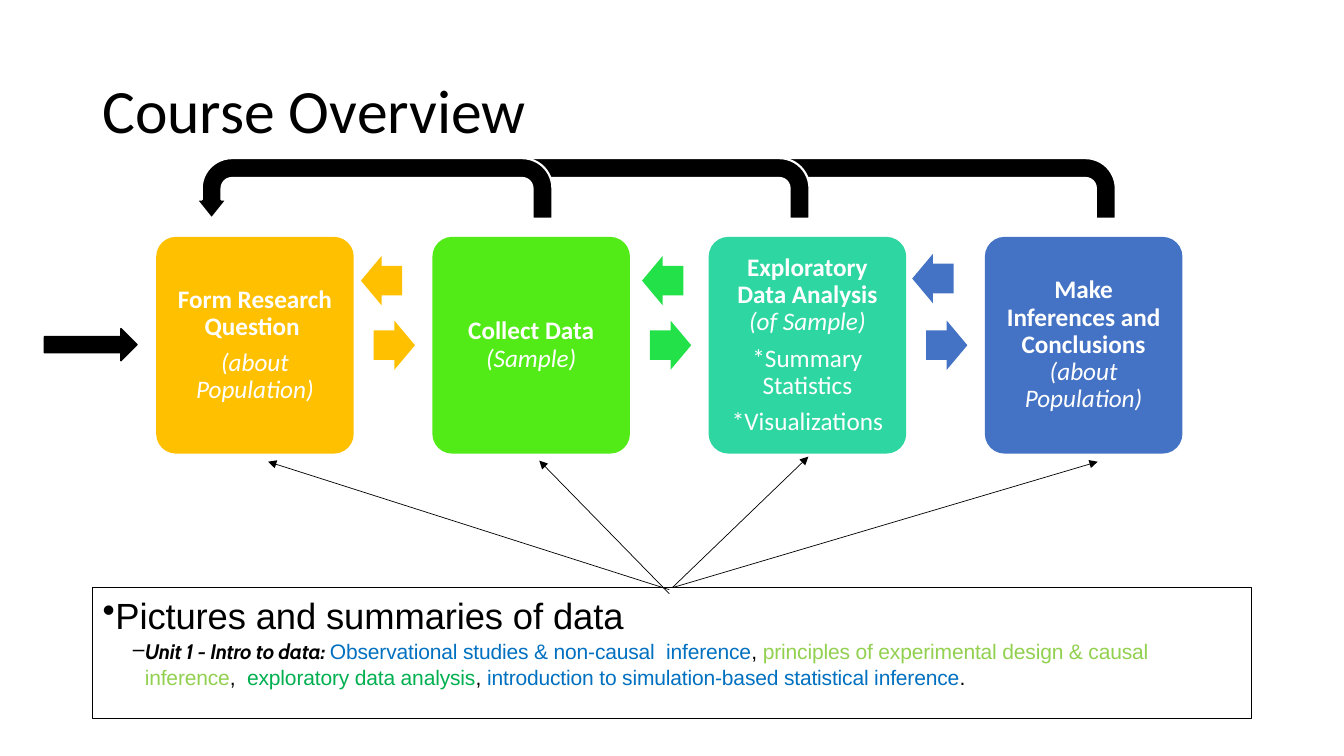
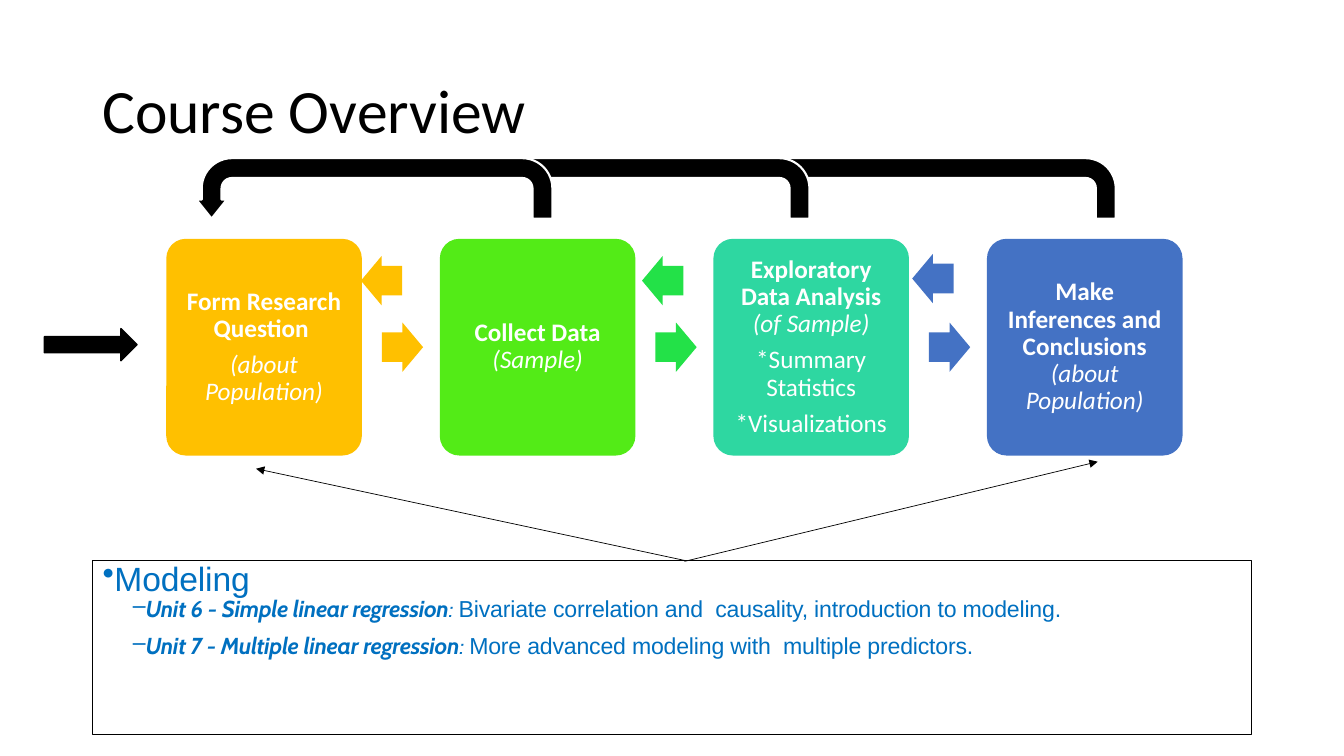
from lxml import etree
from pptx import Presentation
from pptx.dml.color import RGBColor
from pptx.enum.shapes import MSO_CONNECTOR, MSO_SHAPE
from pptx.enum.text import MSO_ANCHOR, PP_ALIGN
from pptx.oxml.ns import qn
from pptx.util import Pt

RECTANGLE = MSO_SHAPE.RECTANGLE
ROUNDED = MSO_SHAPE.ROUNDED_RECTANGLE
RIGHT_ARROW = MSO_SHAPE.RIGHT_ARROW
LEFT_ARROW = MSO_SHAPE.LEFT_ARROW
U_TURN_ARROW = MSO_SHAPE.U_TURN_ARROW
STRAIGHT = MSO_CONNECTOR.STRAIGHT
MIDDLE, TOP = MSO_ANCHOR.MIDDLE, MSO_ANCHOR.TOP
LEFT, CENTER = PP_ALIGN.LEFT, PP_ALIGN.CENTER

COLORS = {
    "black": "000000", "white": "FFFFFF", "amber": "FFC000", "lime": "53EB17",
    "green": "23E148", "teal": "2ED7A1", "indigo": "4472C4", "blue": "0070C0",
    "light green": "92D050", "dark green": "00B050",
}

# font, bold, italic, letter spacing in hundredths of a point
STYLES = {
    "plain": ("Calibri", False, False, 0),
    "strong": ("Calibri", True, False, 0),
    "aside": ("Calibri", False, True, 0),
    "unit": ("Cabin", True, True, -20),
    "colon": ("Cabin", False, True, -10),
    "body": ("Arial", False, False, -10),
}

STEPS = [
    ("amber", [[("Form Research Question ", "strong")],
               [("(about Population)", "aside")]]),
    ("lime", [[("Collect Data ", "strong"), ("(Sample)", "aside")]]),
    ("teal", [[("Exploratory Data Analysis ", "strong"), ("(of Sample)", "aside")],
              [("*Summary Statistics", "plain")],
              [("*Visualizations", "plain")]]),
    ("indigo", [[("Make Inferences and Conclusions ", "strong"),
                 ("(about Population)", "aside")]]),
]
STEP_HEIGHT = 154.8
ARROW_WIDTH, ARROW_HEIGHT = 29.5, 35.2
ARROW_GAP = 14.2
ARROW_COLORS = ["amber", "green", "indigo"]
BACK_ARROWS = [(257.8, 182.9), (458.6, 182.9), (651.6, 181.4)]
LOOP_WIDTHS = [656.6, 437.8, 254.2]
LOOP_ADJUSTMENTS = [0.328, 0.25, 0.313, 0.5, 1]

# bullet, left margin, indent
HEADING = ("•", 0.7, -18)
UNIT = ("–", 30.2, -8.6)

# Panel lines: level, size, line spacing, space before, runs.
# Pointers: start and tip; a start of None is the middle of the panel's top side.
SLIDES = [
    {
        "steps": {"left": 111.6, "top": 169.2, "width": 141.1, "pitch": 197.3},
        "panel": (66.2, 419.8, 828, 93.6),
        "lines": [
            (HEADING, 26, 1.0, 2.8, [("Pictures and summaries of data", "body", "black")]),
            (UNIT, 15, 1.03, 1.2, [
                ("Unit 1 - Intro to data: ", "unit", "black"),
                ("Observational studies & non-causal  inference", "body", "blue"),
                (", ", "body", "black"),
                ("principles of experimental design & causal inference", "body", "light green"),
                (",  ", "body", "black"),
                ("exploratory data analysis", "body", "dark green"),
                (", ", "body", "black"),
                ("introduction to simulation-based statistical inference", "body", "blue"),
                (".", "body", "black"),
            ]),
        ],
        "pointers": [
            ((478.1, 421.2), (191.5, 329.8)),
            ((478.1, 424.1), (385.2, 329)),
            (None, (577.4, 326.2)),
            (None, (784.1, 329.8)),
        ],
    },
    {
        "steps": {"left": 118.8, "top": 170.6, "width": 139.7, "pitch": 195.4},
        "panel": (66.2, 400.3, 828, 124.6),
        "lines": [
            (HEADING, 24, 0.8, 0.3, [("Modeling", "body", "blue")]),
            (UNIT, 16.5, 0.83, 1.2, [
                ("Unit 6 - Simple linear regression", "unit", "blue"),
                (": ", "colon", "blue"),
                ("Bivariate correlation and  causality, introduction to modeling.",
                 "body", "blue"),
            ]),
            (UNIT, 16.5, 0.83, 10, [
                ("Unit 7 - Multiple linear regression", "unit", "blue"),
                (": ", "colon", "blue"),
                ("More advanced modeling with  multiple predictors.", "body", "blue"),
            ]),
        ],
        "pointers": [
            ((488.9, 401), (784.1, 329.8)),
            ((488.9, 400.3), (182.9, 334.8)),
        ],
    },
]


def add_shape(slide, preset, box, fill=None, line=None, line_width=1, adjustments=()):
    shape = slide.shapes.add_shape(preset, *[Pt(length) for length in box])
    shape.shadow.inherit = False
    if fill:
        shape.fill.solid()
        shape.fill.fore_color.rgb = RGBColor.from_string(COLORS[fill])
    else:
        shape.fill.background()
    if line:
        shape.line.color.rgb = RGBColor.from_string(COLORS[line])
        shape.line.width = Pt(line_width)
    else:
        shape.line.fill.background()
    for index, value in enumerate(adjustments):
        shape.adjustments[index] = value
    return shape


def add_paragraph(frame, runs, size, alignment=LEFT, line_spacing=0.9,
                  before=0, after=0, bullet=None):
    """Fill the frame's first paragraph if it is still empty, else append one."""
    first = frame.paragraphs[0]
    paragraph = frame.add_paragraph() if first.runs else first
    paragraph.alignment = alignment
    paragraph.line_spacing = line_spacing
    paragraph.space_before = Pt(before)
    paragraph.space_after = Pt(after)
    if bullet:
        character, margin, indent = bullet
        properties = paragraph._p.get_or_add_pPr()
        properties.set("marL", str(Pt(margin)))
        properties.set("indent", str(Pt(indent)))
        etree.SubElement(properties, qn("a:buChar")).set("char", character)
    for text, style, color in runs:
        run = paragraph.add_run()
        run.text = text
        name, bold, italic, spacing = STYLES[style]
        run.font.name = name
        run.font.size = Pt(size)
        run.font.bold = bold
        run.font.italic = italic
        run.font.color.rgb = RGBColor.from_string(COLORS[color])
        if spacing:
            run.font._element.set("spc", str(spacing))


presentation = Presentation()
presentation.slide_width = Pt(960)
presentation.slide_height = Pt(540)

for content in SLIDES:
    slide = presentation.slides.add_slide(presentation.slide_layouts[6])

    title = slide.shapes.add_textbox(Pt(66), Pt(28.8), Pt(828), Pt(104.4)).text_frame
    title.word_wrap = True
    title.vertical_anchor = MIDDLE
    add_paragraph(title, [("Course Overview", "plain", "black")], 44)

    panel = add_shape(slide, RECTANGLE, content["panel"], line="black", line_width=0.75)
    panel.text_frame.word_wrap = True
    panel.text_frame.vertical_anchor = TOP
    for bullet, size, line_spacing, before, runs in content["lines"]:
        add_paragraph(panel.text_frame, runs, size, line_spacing=line_spacing,
                      before=before, bullet=bullet)

    # Feedback loops, widest at the back
    for width in LOOP_WIDTHS:
        loop = add_shape(slide, U_TURN_ARROW, (140.4, 113, width, 43.2), "black",
                         "white", 1.5, LOOP_ADJUSTMENTS)
        loop._element.spPr.find(qn("a:xfrm")).set("flipH", "1")

    # Process steps
    steps = content["steps"]
    for index, (color, paragraphs) in enumerate(STEPS):
        left = steps["left"] + index * steps["pitch"]
        step = add_shape(slide, ROUNDED, (left, steps["top"], steps["width"], STEP_HEIGHT),
                         color, adjustments=[0.1])
        frame = step.text_frame
        frame.word_wrap = True
        frame.vertical_anchor = MIDDLE
        frame.margin_left = frame.margin_right = Pt(5)
        frame.margin_top = frame.margin_bottom = Pt(5)
        for runs in paragraphs:
            white_runs = [(text, style, "white") for text, style in runs]
            add_paragraph(frame, white_runs, 18, CENTER, after=6.3)

    # Arrows between the steps, forward and back
    forward_top = steps["top"] + (STEP_HEIGHT - ARROW_HEIGHT) / 2
    for index, color in enumerate(ARROW_COLORS):
        forward_left = steps["left"] + index * steps["pitch"] + steps["width"] + ARROW_GAP
        for preset, corner in ((RIGHT_ARROW, (forward_left, forward_top)),
                               (LEFT_ARROW, BACK_ARROWS[index])):
            add_shape(slide, preset, (*corner, ARROW_WIDTH, ARROW_HEIGHT), color,
                      adjustments=[0.6, 0.5])
    add_shape(slide, RIGHT_ARROW, (31.7, 234.7, 66.2, 23), "black", "black")

    # Pointers from the panel to the steps
    for start, tip in content["pointers"]:
        pointer = slide.shapes.add_connector(
            STRAIGHT, *[Pt(length) for length in (*(start or tip), *tip)])
        if start is None:
            pointer.begin_connect(panel, 0)
        pointer.line.color.rgb = RGBColor.from_string(COLORS["black"])
        pointer.line.width = Pt(0.5)
        properties = pointer._element.spPr
        etree.SubElement(properties.find(qn("a:ln")), qn("a:tailEnd")).set("type", "triangle")
        etree.SubElement(properties, qn("a:effectLst"))

presentation.save("out.pptx")
